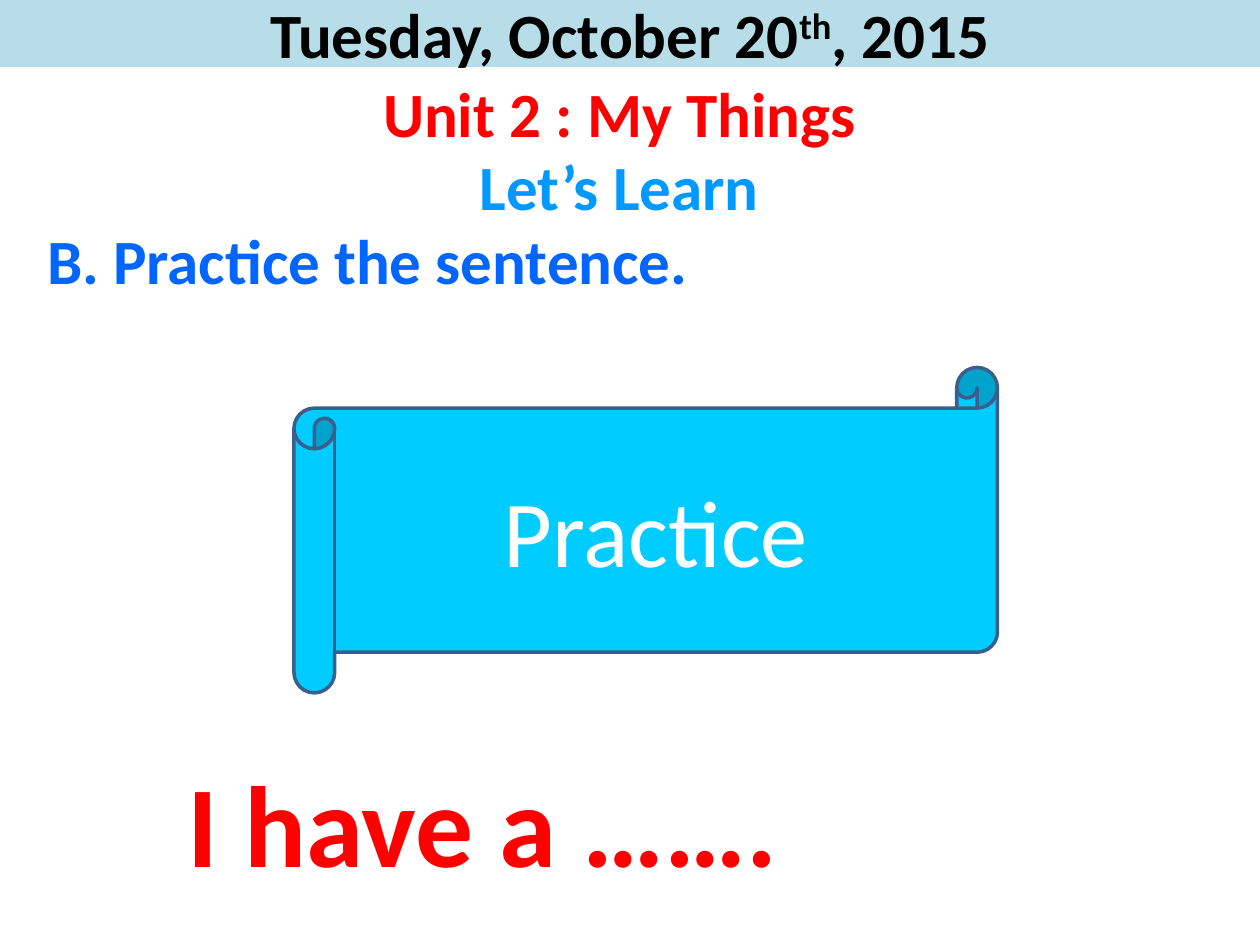
from pptx import Presentation
from pptx.dml.color import RGBColor
from pptx.enum.shapes import MSO_SHAPE
from pptx.enum.text import MSO_ANCHOR, MSO_AUTO_SIZE, PP_ALIGN
from pptx.util import Inches, Pt

COLUMNS, ROWS = 120, 90
COLORS = {
    "banner": "B7DEE8", "black": "000000", "red": "FF0000", "sky": "0099FF",
    "blue": "0066FF", "scroll": "00CCFF", "outline": "3A5F8C", "white": "FFFFFF",
}
TITLE_ONLY = 5

presentation = Presentation()
presentation.slide_width = Inches(10)
presentation.slide_height = Inches(7.5)


def color(name):
    return RGBColor.from_string(COLORS[name])


def grid_box(left, top, width, height):
    """Turn grid columns and rows into slide lengths."""
    column = presentation.slide_width / COLUMNS
    row = presentation.slide_height / ROWS
    return [round(n) for n in (left * column, top * row, width * column, height * row)]


def write(shape, parts, size, color_name, bold=True, anchor=MSO_ANCHOR.TOP):
    """Fill the shape with one centred line; parts are (text, superscript) pairs."""
    frame_format = {"word_wrap": True, "auto_size": MSO_AUTO_SIZE.NONE,
                    "vertical_anchor": anchor}
    for name, value in frame_format.items():
        setattr(shape.text_frame, name, value)
    paragraph = shape.text_frame.paragraphs[0]
    paragraph.alignment = PP_ALIGN.CENTER
    font_format = {"name": "Calibri", "size": Pt(size), "bold": bold}
    for text, superscript in parts:
        run = paragraph.add_run()
        run.text = text
        for name, value in font_format.items():
            setattr(run.font, name, value)
        run.font.color.rgb = color(color_name)
        if superscript:
            run._r.get_or_add_rPr().set("baseline", "30000")


def add_date_banner(slide, box):
    title = slide.shapes.title
    for name, value in zip(("left", "top", "width", "height"), grid_box(*box)):
        setattr(title, name, value)
    title.fill.solid()
    title.fill.fore_color.rgb = color("banner")
    date = [("Tuesday, October 20", False), ("th", True), (", 2015", False)]
    write(title, date, 36, "black", anchor=MSO_ANCHOR.MIDDLE)


def add_line(slide, box, text, size, color_name):
    write(slide.shapes.add_textbox(*grid_box(*box)), [(text, False)], size, color_name)


def add_headings(slide, box):
    """Stack the three headings; the last one is moved to the left margin."""
    left, top, width, height = box
    row_step = 7
    headings = [
        ("Unit 2 : My Things", "red", left),
        ("Let’s Learn", "sky", left),
        ("B. Practice the sentence.", "blue", 2),
    ]
    for index, (text, color_name, start) in enumerate(headings):
        line_box = (start, top + index * row_step, width, height - 2 * row_step)
        add_line(slide, line_box, text, 36, color_name)


def add_practice_scroll(slide, box):
    scroll = slide.shapes.add_shape(MSO_SHAPE.HORIZONTAL_SCROLL, *grid_box(*box))
    scroll.shadow.inherit = False
    scroll.fill.solid()
    scroll.fill.fore_color.rgb = color("scroll")
    scroll.line.color.rgb = color("outline")
    scroll.line.width = Pt(2)
    write(scroll, [("Practice", False)], 54, "white", False, MSO_ANCHOR.MIDDLE)


def main():
    slide = presentation.slides.add_slide(presentation.slide_layouts[TITLE_ONLY])
    add_date_banner(slide, (0, 0, COLUMNS, 6.4))
    add_headings(slide, (26, 6.5, 66, 22.5))
    add_practice_scroll(slide, (28, 35, 67, 31))
    add_line(slide, (13, 71, 66, 14.5), "I have a …….", 66, "red")
    presentation.save("out.pptx")


if __name__ == "__main__":
    main()
